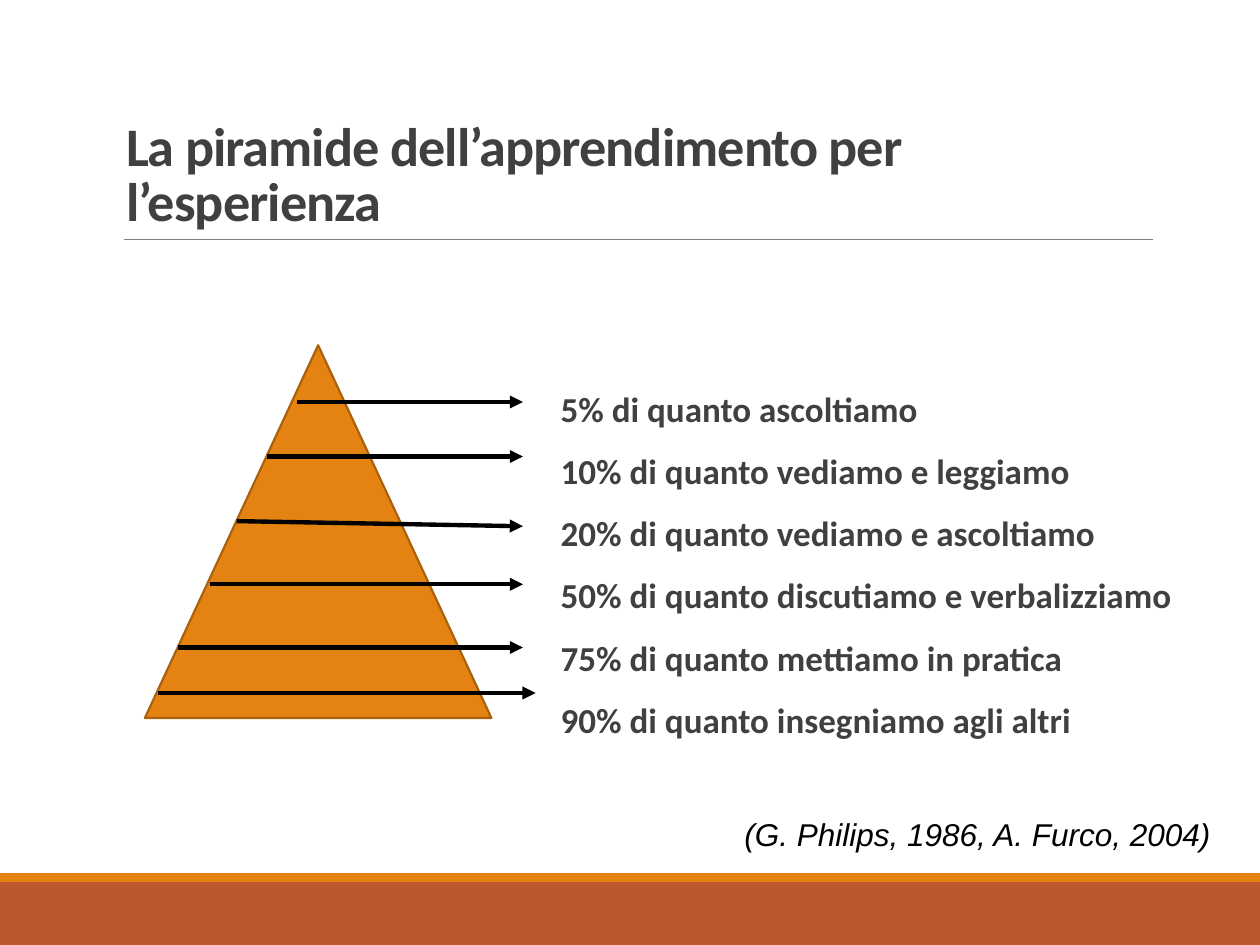
from typing import NamedTuple

from lxml import etree
from pptx import Presentation
from pptx.dml.color import RGBColor
from pptx.enum.shapes import MSO_CONNECTOR, MSO_SHAPE
from pptx.enum.text import MSO_ANCHOR, MSO_AUTO_SIZE, PP_ALIGN
from pptx.oxml.ns import qn
from pptx.util import Pt

STRAIGHT = MSO_CONNECTOR.STRAIGHT
RECTANGLE, TRIANGLE = MSO_SHAPE.RECTANGLE, MSO_SHAPE.ISOSCELES_TRIANGLE
TOP, BOTTOM = MSO_ANCHOR.TOP, MSO_ANCHOR.BOTTOM
LEFT = PP_ALIGN.LEFT
NO_AUTOFIT = MSO_AUTO_SIZE.NONE

ORANGE = RGBColor(0xE4, 0x83, 0x12)
DARK_ORANGE = RGBColor(0xA9, 0x61, 0x0D)
RUST = RGBColor(0xBD, 0x58, 0x2C)
GREY = RGBColor(0x80, 0x80, 0x80)
DARK_GREY = RGBColor(0x40, 0x40, 0x40)
BLACK = RGBColor(0, 0, 0)

TITLE = "La piramide dell’apprendimento per l’esperienza"
CITATION = "(G. Philips, 1986, A. Furco, 2004)"


class Box(NamedTuple):
    left: float
    top: float
    width: float
    height: float


class Level(NamedTuple):
    """A level of the pyramid: its label and the ends of its arrow."""
    label: str
    start_x: float
    start_y: float
    end_x: float
    end_y: float


ARROW_END = 298.8
LEVELS = [
    Level("5% di quanto ascoltiamo", 169.9, 229.7, ARROW_END, 229.7),
    Level("10% di quanto vediamo e leggiamo", 152.6, 260.9, ARROW_END, 260.9),
    Level("20% di quanto vediamo e ascoltiamo", 135.2, 297.8, ARROW_END, 300.7),
    Level("50% di quanto discutiamo e verbalizziamo", 120.2, 333.9, ARROW_END, 333.9),
    Level("75% di quanto mettiamo in pratica", 102, 370, ARROW_END, 370),
    Level("90% di quanto insegniamo agli altri", 90, 396, 306, 396),
]


def place(shape, box: Box) -> None:
    shape.left, shape.top, shape.width, shape.height = map(Pt, box)


def style_font(font, name: str, size: float, color: RGBColor) -> None:
    font.name, font.size = name, Pt(size)
    font.color.rgb = color


def add_filled(slide, preset, box: Box, fill: RGBColor):
    """Add a preset shape with a plain fill, no outline and no shadow."""
    shape = slide.shapes.add_shape(preset, *map(Pt, box))
    shape.shadow.inherit = False
    shape.fill.solid()
    shape.fill.fore_color.rgb = fill
    shape.line.fill.background()
    return shape


def add_line(slide, ends: tuple, color: RGBColor, width: float, arrow: bool = False) -> None:
    connector = slide.shapes.add_connector(STRAIGHT, *map(Pt, ends))
    connector.line.color.rgb = color
    connector.line.width = Pt(width)
    if arrow:
        line = connector.line._get_or_add_ln()
        etree.SubElement(line, qn("a:tailEnd"), type="triangle")
    etree.SubElement(connector._element.spPr, qn("a:effectLst"))


def fill_title(shape) -> None:
    place(shape, Box(64.8, 22.3, 594, 114.5))
    frame = shape.text_frame
    frame.text = TITLE
    frame.auto_size, frame.vertical_anchor = NO_AUTOFIT, BOTTOM
    paragraph = frame.paragraphs[0]
    paragraph.alignment, paragraph.line_spacing = LEFT, 0.85
    font = paragraph.runs[0].font
    style_font(font, "Calibri", 31, DARK_GREY)
    font.bold = True
    paragraph.runs[0]._r.get_or_add_rPr().set("spc", "-50")


def fill_labels(shape) -> None:
    place(shape, Box(313.2, 145.4, 386, 316.8))
    frame = shape.text_frame
    frame.text = "\n".join(level.label for level in LEVELS)
    frame.auto_size, frame.vertical_anchor = NO_AUTOFIT, TOP
    frame.margin_left = frame.margin_right = 0
    frame.margin_top = Pt(78.5)
    for index, paragraph in enumerate(frame.paragraphs):
        properties = paragraph._p.get_or_add_pPr()
        properties.set("marL", str(Pt(7.2)))
        properties.set("indent", "0")
        etree.SubElement(properties, qn("a:buNone"))
        paragraph.line_spacing = 0.9
        paragraph.space_before = Pt(12 if index else 0)
        paragraph.space_after = Pt(2)
        font = paragraph.runs[0].font
        style_font(font, "Calibri", 20, DARK_GREY)
        font.bold = True


def add_citation(slide) -> None:
    frame = slide.shapes.add_textbox(*map(Pt, Box(418.3, 449.3, 360, 42.5))).text_frame
    frame.word_wrap = True
    frame.margin_top = Pt(16.2)
    frame.text = CITATION
    font = frame.paragraphs[0].runs[0].font
    style_font(font, "Arial", 18, BLACK)
    font.italic = True


def main() -> None:
    presentation = Presentation()
    presentation.slide_width, presentation.slide_height = Pt(720), Pt(540)
    slide = presentation.slides.add_slide(presentation.slide_layouts[1])

    add_filled(slide, RECTANGLE, Box(0, 504, 720, 36), RUST)
    add_filled(slide, RECTANGLE, Box(0, 499, 720, 5), ORANGE)
    add_line(slide, (70.6, 136.8, 658.8, 136.8), GREY, 0.5)

    fill_title(slide.shapes.title)
    fill_labels(slide.placeholders[1])
    add_citation(slide)

    pyramid = add_filled(slide, TRIANGLE, Box(82.8, 197.3, 198, 213), ORANGE)
    pyramid.line.color.rgb = DARK_ORANGE
    pyramid.line.width = Pt(1.25)
    for level in LEVELS:
        add_line(slide, level[1:], BLACK, 2.5, arrow=True)

    presentation.save("out.pptx")


if __name__ == "__main__":
    main()
